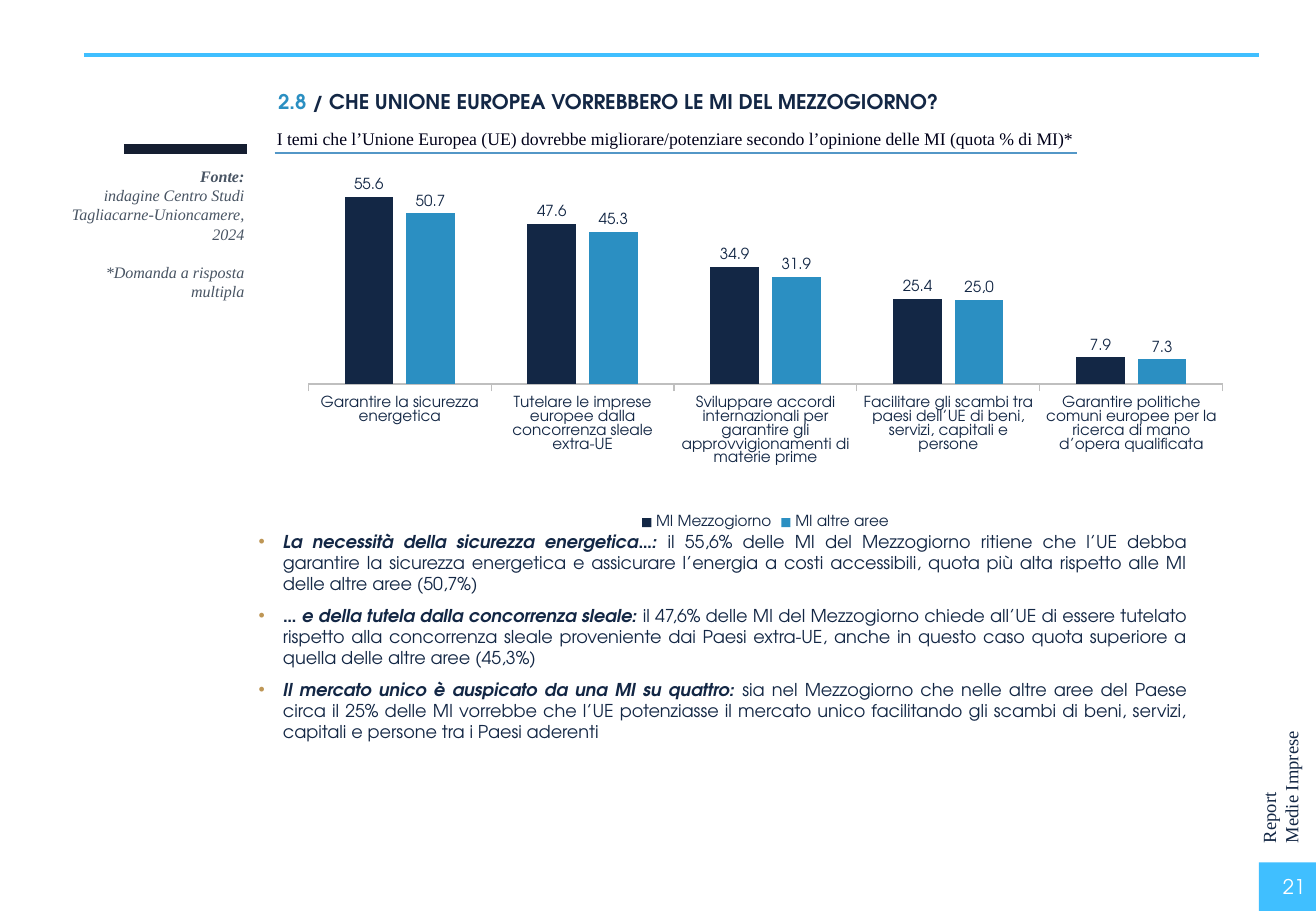
from lxml.etree import SubElement
from pptx import Presentation
from pptx.chart.data import CategoryChartData as ChartData
from pptx.dml.color import RGBColor
from pptx.enum.chart import XL_CHART_TYPE as ChartType, XL_LABEL_POSITION as LabelPosition
from pptx.enum.chart import XL_LEGEND_POSITION as LegendPosition, XL_TICK_MARK as TickMark
from pptx.enum.shapes import MSO_CONNECTOR as Connector, MSO_SHAPE as Shape
from pptx.enum.text import MSO_ANCHOR as Anchor, PP_ALIGN as Align
from pptx.oxml import parse_xml
from pptx.oxml.ns import nsdecls, qn
from pptx.util import Emu, Pt

SCALE = 9144
SANS, SERIF = "TeX Gyre Adventor", "Times New Roman"
NAVY, BLUE, SKY = "132745", "2B8FC2", "40BFFF"


def px(length):
    """Turn px into EMU."""
    return Emu(length * SCALE)


def color(code):
    """Turn a hex string into a colour."""
    return RGBColor.from_string(code)


def style_font(font, size=9, name=SANS, ink=NAVY, bold=False, italic=False):
    """Set every property of a font."""
    font.size, font.name, font.bold, font.italic = Pt(size), name, bold, italic
    font.color.rgb = color(ink)


def span(text, **style):
    """Pair a text with the format it takes."""
    return text, style


class Page:
    """One slide and the methods that draw on it."""

    def __init__(self, deck):
        """Add a blank slide to the deck."""
        self.shapes = deck.slides.add_slide(deck.slide_layouts[6]).shapes

    def block(self, left, top, width, height, fill):
        """Draw a plain rectangle."""
        shape = self.shapes.add_shape(Shape.RECTANGLE, px(left), px(top), px(width), px(height))
        shape.shadow.inherit = False
        shape.fill.solid()
        shape.fill.fore_color.rgb = color(fill)
        shape.line.fill.background()

    def rule(self, left, right, top, ink, weight):
        """Draw a horizontal line."""
        line = self.shapes.add_connector(Connector.STRAIGHT, px(left), px(top), px(right), px(top))
        line.line.color.rgb = color(ink)
        line.line.width = Pt(weight)
        SubElement(line.element.spPr, qn("a:effectLst"))

    def text(self, left, top, width, height, paras, align=Align.LEFT, anchor=Anchor.TOP,
             rotation=0, bullet=None, before=(), after=0, **style):
        """Write paragraphs, each a list of spans, in a text box."""
        box = self.shapes.add_textbox(px(left), px(top), px(width), px(height))
        box.rotation = rotation
        frame = box.text_frame
        frame.word_wrap = True
        frame.vertical_anchor = anchor
        for index, spans in enumerate(paras):
            para = frame.paragraphs[0] if index == 0 else frame.add_paragraph()
            if bullet:
                self.bullet(para, bullet)
            para.alignment = align
            para.space_after = Pt(after)
            if index < len(before):
                para.space_before = Pt(before[index])
            for words, own in spans:
                run = para.add_run()
                run.text = words
                style_font(run.font, **{**style, **own})

    def bullet(self, para, ink):
        """Give a paragraph a hanging bullet."""
        props = para._p.get_or_add_pPr()
        props.set("marL", str(px(20)))
        props.set("indent", str(px(-20)))
        SubElement(SubElement(props, qn("a:buClr")), qn("a:srgbClr"), val=ink)
        SubElement(props, qn("a:buFont"), typeface="Arial")
        SubElement(props, qn("a:buChar"), char="•")

    def columns(self, left, top, width, height, categories, series, inner, top_value):
        """Draw a clustered column chart; series are (name, fill, values)."""
        data = ChartData()
        data.categories = categories
        for name, _, values in series:
            data.add_series(name, values)
        chart = self.shapes.add_chart(ChartType.COLUMN_CLUSTERED, px(left), px(top),
                                      px(width), px(height), data).chart
        style_font(chart.font)
        chart.has_title = False
        chart.has_legend = True
        chart.legend.position = LegendPosition.BOTTOM
        chart.legend.include_in_layout = False
        style_font(chart.legend.font)

        values_axis = chart.value_axis
        values_axis.minimum_scale, values_axis.maximum_scale = 0, top_value
        values_axis.has_major_gridlines = False
        values_axis.visible = False
        axis = chart.category_axis
        axis.major_tick_mark = TickMark.OUTSIDE
        axis.format.line.color.rgb = color("BFBFBF")
        axis.format.line.width = Pt(0.75)
        style_font(axis.tick_labels.font)

        plot = chart.plots[0]
        plot.gap_width, plot.overlap, plot.vary_by_categories = 150, -27, False
        for bars, (_, fill, _) in zip(plot.series, series):
            bars.format.fill.solid()
            bars.format.fill.fore_color.rgb = color(fill)
            labels = bars.data_labels
            labels.show_value = True
            labels.position = LabelPosition.OUTSIDE_END
            style_font(labels.font)
        self.place_plot(chart, inner)
        return chart

    def place_plot(self, chart, inner):
        """Fix the inner plot area as fractions of the chart."""
        area = chart.element.find(".//" + qn("c:plotArea"))
        for old in area.findall(qn("c:layout")):
            area.remove(old)
        layout = parse_xml(f"<c:layout {nsdecls('c')}/>")
        manual = SubElement(layout, qn("c:manualLayout"))
        SubElement(manual, qn("c:layoutTarget"), val="inner")
        for side in "xy":
            SubElement(manual, qn(f"c:{side}Mode"), val="edge")
        for side, share in zip("xywh", inner):
            SubElement(manual, qn(f"c:{side}"), val=str(share))
        area.insert(0, layout)

    def relabel(self, chart, series, point, words):
        """Replace the value above one column by a text."""
        label = chart.plots[0].series[series].points[point].data_label
        run = label.text_frame.paragraphs[0].add_run()
        run.text = words
        style_font(run.font)
        label.position = LabelPosition.OUTSIDE_END


FINDINGS = [
    ("La necessità della sicurezza energetica…: ",
     "il 55,6% delle MI del Mezzogiorno ritiene che l’UE debba garantire la sicurezza energetica "
     "e assicurare l’energia a costi accessibili, quota più alta rispetto alle MI delle altre aree (50,7%)"),
    ("… e della tutela dalla concorrenza sleale: ",
     "il 47,6% delle MI del Mezzogiorno chiede all’UE di essere tutelato rispetto alla concorrenza sleale "
     "proveniente dai Paesi extra-UE, anche in questo caso quota superiore a quella delle altre aree (45,3%)"),
    ("Il mercato unico è auspicato da una MI su quattro: ",
     "sia nel Mezzogiorno che nelle altre aree del Paese circa il 25% delle MI vorrebbe che l’UE potenziasse "
     "il mercato unico facilitando gli scambi di beni, servizi, capitali e persone tra i Paesi aderenti"),
]
THEMES = [
    "Garantire la sicurezza energetica",
    "Tutelare le imprese europee dalla concorrenza sleale extra-UE",
    "Sviluppare accordi internazionali per garantire gli approvvigionamenti di materie prime",
    "Facilitare gli scambi tra paesi dell’UE di beni, servizi, capitali e persone",
    "Garantire politiche comuni europee per la ricerca di mano d’opera qualificata",
]
SHARES = [
    ("MI Mezzogiorno", NAVY, (55.6, 47.6, 34.9, 25.4, 7.9)),
    ("MI altre aree", BLUE, (50.7, 45.3, 31.9, 25, 7.3)),
]


def main():
    """Build the slide and save it."""
    deck = Presentation()
    deck.slide_width, deck.slide_height = px(1083), px(750)
    page = Page(deck)

    page.block(1036, 710, 47, 40, SKY)
    page.text(959, 586, 189, 47, [[span("Report")], [span("Medie Imprese")]],
              rotation=270, size=11, name=SERIF)
    page.rule(69, 1036, 45, SKY, 2.5)

    page.text(203, 432, 784, 186,
              [[span(lead, bold=True, italic=True), span(body)] for lead, body in FINDINGS],
              align=Align.JUSTIFY, bullet="BE9655", after=6, size=10.5)
    page.text(219, 69, 863, 30,
              [[span("2.8 ", ink=BLUE), span("/ CHE UNIONE EUROPEA VORREBBERO LE MI DEL MEZZOGIORNO?")]],
              size=12, bold=True)
    page.text(840, 710, 244, 40, [[span("21")]], align=Align.RIGHT, anchor=Anchor.MIDDLE,
              size=12, ink="FFFFFF")
    page.text(218, 100, 804, 28,
              [[span("I temi che l’Unione Europea (UE) dovrebbe migliorare/potenziare "
                     "secondo l’opinione delle MI (quota % di MI)*")]],
              size=10.5, name=SERIF, ink="000019")
    page.rule(226, 886, 126, "5397C7", 0.75)

    page.rule(102, 203, 123, "151E31", 6)
    page.text(47, 132, 164, 138,
              [[span("Fonte:", bold=True)],
               [span("indagine Centro Studi Tagliacarne-Unioncamere, 2024")],
               [span("*Domanda a risposta multipla")]],
              align=Align.RIGHT, before=(0, 0, 11.5), size=9.5, name=SERIF, ink="485463", italic=True)

    chart = page.columns(238, 138, 784, 302, THEMES, SHARES, (0.02, 0.04, 0.96, 0.55), 60)
    page.relabel(chart, 1, 3, "25,0")
    deck.save("out.pptx")


if __name__ == "__main__":
    main()
